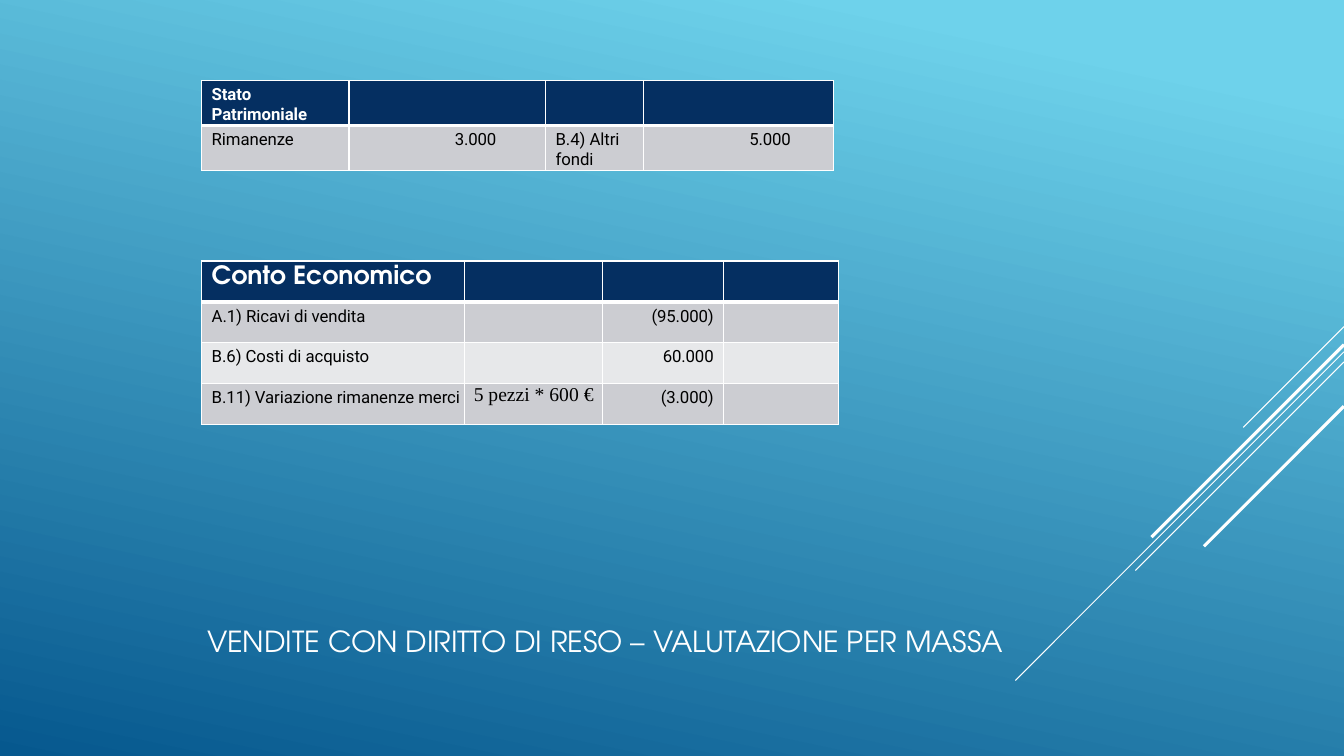
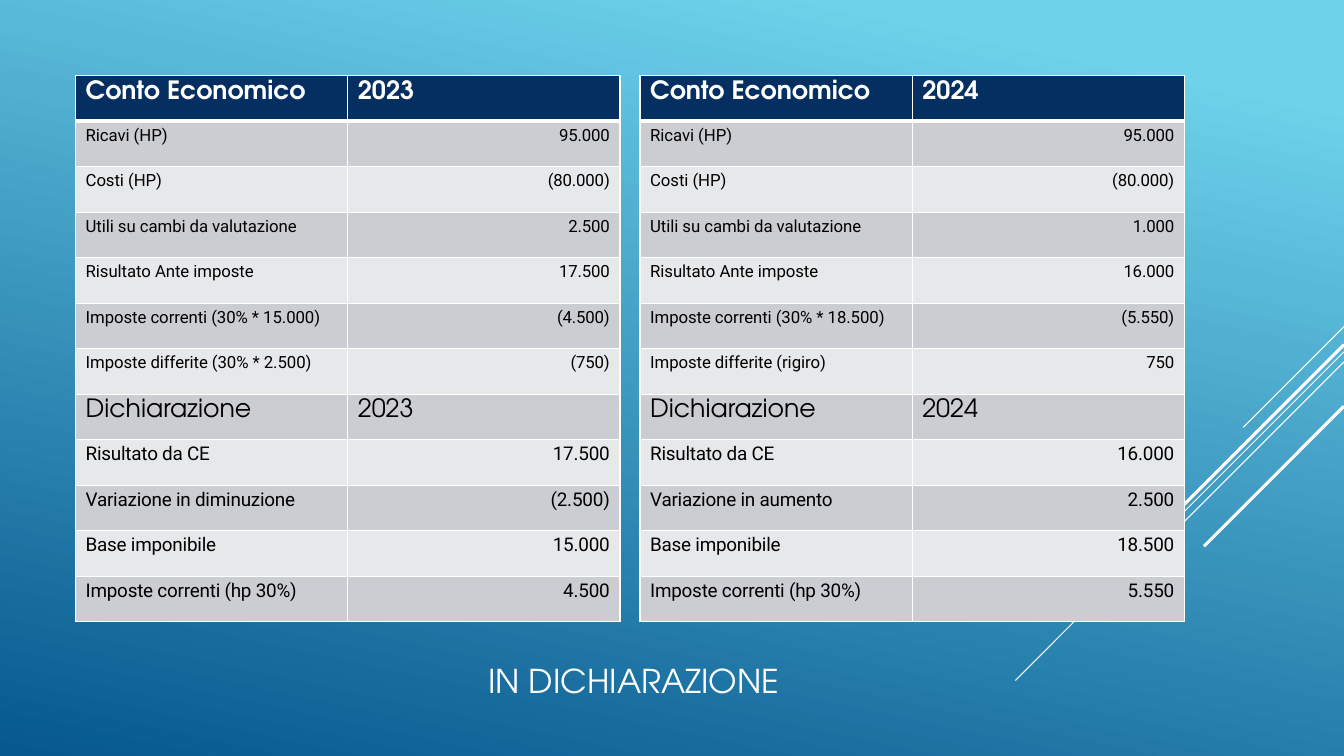
"""Build two slides of accounting tables on a shared blue gradient."""
from collections import namedtuple

from lxml import etree
from pptx import Presentation
from pptx import util as u
from pptx.dml.color import RGBColor
from pptx.enum import shapes, text
from pptx.oxml import ns

Pt = u.Pt
WHITE = RGBColor(0xFF, 0xFF, 0xFF)
BLACK = RGBColor(0, 0, 0)
NAVY = RGBColor(0x05, 0x2F, 0x61)
DARK_BAND = RGBColor(0xCC, 0xCD, 0xD2)
LIGHT_BAND = RGBColor(0xE7, 0xE8, 0xEA)
SKY = RGBColor(0x6E, 0xD2, 0xEB)
OCEAN = RGBColor(0x06, 0x58, 0x8E)
DISPLAY_FONT = "TeX Gyre Adventor"
BODY_FONT = "Roboto"
LEFT, CENTER, RIGHT = text.PP_ALIGN.LEFT, text.PP_ALIGN.CENTER, text.PP_ALIGN.RIGHT

SLIDE_WIDTH, SLIDE_HEIGHT = 960, 540
DIAGONALS = [(233.3, 72, 0.75), (251.3, 234.7, 0.75), (258.5, 149, 0.75),
             (246.2, 137.5, 2.25), (290.2, 100, 2.25)]

Style = namedtuple("Style", "font size align left right top before tracking")
HEADING = Style(DISPLAY_FONT, 18, LEFT, 7.2, 7.2, 3.6, 0, 0)
LABEL = Style(BODY_FONT, 12, LEFT, 7.2, 0, 3.2, 3.3, -5)
AMOUNT = LABEL._replace(align=RIGHT, left=0, right=7.2, tracking=-10)
INDENTED = LABEL._replace(left=75.6, tracking=-10)
NOTE = Style("Times New Roman", 14, CENTER, 0, 0, 0, 0, 0)
LARGE_LABEL = LABEL._replace(size=13.5, top=2.6, before=2.6, tracking=-15)
LARGE_AMOUNT = AMOUNT._replace(size=13.5, top=2.6, before=2.6)


def add_base(title, left, top, width, height, size):
    slide = presentation.slides.add_slide(presentation.slide_layouts[6])
    for start, reach, weight in DIAGONALS:
        line = slide.shapes.add_connector(
            shapes.MSO_CONNECTOR.STRAIGHT, Pt(SLIDE_WIDTH), Pt(start),
            Pt(SLIDE_WIDTH - reach), Pt(start + reach))
        line.line.color.rgb = WHITE
        line.line.width = Pt(weight)
        etree.SubElement(line._element.spPr, ns.qn("a:effectLst"))
    frame = slide.shapes.add_textbox(Pt(left), Pt(top), Pt(width), Pt(height)).text_frame
    frame.word_wrap = True
    frame.vertical_anchor = text.MSO_ANCHOR.MIDDLE
    frame.text = title
    paragraph = frame.paragraphs[0]
    paragraph.alignment = CENTER
    font = paragraph.runs[0].font
    font.name, font.size, font.color.rgb = DISPLAY_FONT, Pt(size), WHITE
    return slide


def add_grid(slide, left, top, widths, row_height, rows):
    table = slide.shapes.add_table(
        len(rows), len(widths), Pt(left), Pt(top),
        Pt(sum(widths)), Pt(row_height * len(rows))).table
    table.first_row = table.horz_banding = False
    for column, width in zip(table.columns, widths):
        column.width = Pt(width)
    for index, (styles, texts) in enumerate(rows):
        table.rows[index].height = Pt(row_height)
        band = NAVY if index == 0 else (LIGHT_BAND, DARK_BAND)[index % 2]
        for cell, style, content in zip(table.rows[index].cells, styles, texts):
            properties = cell._tc.get_or_add_tcPr()
            for side in "LRTB":
                under_header = (index, side) in ((0, "B"), (1, "T"))
                border = etree.SubElement(properties, ns.qn(f"a:ln{side}"),
                                          w=str(Pt(3 if under_header else 1)))
                fill = etree.SubElement(border, ns.qn("a:solidFill"))
                etree.SubElement(fill, ns.qn("a:srgbClr"), val=str(WHITE))
            cell.fill.solid()
            cell.fill.fore_color.rgb = band
            cell.margin_left, cell.margin_right = Pt(style.left), Pt(style.right)
            cell.margin_top, cell.margin_bottom = Pt(style.top), Pt(0)
            cell.text_frame.text = content
            paragraph = cell.text_frame.paragraphs[0]
            paragraph.alignment = style.align
            paragraph.space_before = Pt(style.before)
            for run in paragraph.runs:
                run.font.name, run.font.size = style.font, Pt(style.size)
                run.font.bold = index == 0
                run.font.color.rgb = WHITE if index == 0 else BLACK
                run._r.get_or_add_rPr().set("spc", str(style.tracking))


presentation = Presentation()
presentation.slide_width, presentation.slide_height = Pt(SLIDE_WIDTH), Pt(SLIDE_HEIGHT)
background = presentation.slide_master.background.fill
background.gradient()
background.gradient_angle = 258
for stop, color, position in zip(background.gradient_stops, (SKY, OCEAN), (0.1, 1)):
    stop.color.rgb = color
    stop.position = position

slide = add_base("VENDITE CON DIRITTO DI RESO – VALUTAZIONE PER MASSA",
                 54, 443.5, 756.7, 28.8, 20.7)
add_grid(slide, 144, 57.6, [105.3, 140.4, 70, 135.6], 29.5, [
    ([LABEL] * 4, ["Stato Patrimoniale", "", "", ""]),
    ([LABEL, INDENTED, LABEL, INDENTED], ["Rimanenze", "3.000", "B.4) Altri fondi", "5.000"]),
])
entry = [LABEL, NOTE, AMOUNT, AMOUNT]
add_grid(slide, 144, 186.5, [188, 98.6, 86.4, 82], 29.2, [
    ([HEADING] * 4, ["Conto Economico", "", "", ""]),
    (entry, ["A.1) Ricavi di vendita", "", "(95.000)", ""]),
    (entry, ["B.6) Costi di acquisto", "", "60.000", ""]),
    (entry, ["B.11) Variazione rimanenze merci", "5 pezzi * 600 €", "(3.000)", ""]),
])

slide = add_base("IN DICHIARAZIONE", 59, 468.7, 787, 34.6, 23.4)
years = [
    ("2023",
     [("Utili su cambi da valutazione", "2.500"),
      ("Risultato Ante imposte", "17.500"),
      ("Imposte correnti (30% * 15.000)", "(4.500)"),
      ("Imposte differite (30% * 2.500)", "(750)")],
     [("Risultato da CE", "17.500"),
      ("Variazione in diminuzione", "(2.500)"),
      ("Base imponibile", "15.000"),
      ("Imposte correnti (hp 30%)", "4.500")]),
    ("2024",
     [("Utili su cambi da valutazione", "1.000"),
      ("Risultato Ante imposte", "16.000"),
      ("Imposte correnti (30% * 18.500)", "(5.550)"),
      ("Imposte differite (rigiro)", "750")],
     [("Risultato da CE", "16.000"),
      ("Variazione in aumento", "2.500"),
      ("Base imponibile", "18.500"),
      ("Imposte correnti (hp 30%)", "5.550")]),
]
shared_entries = [("Ricavi (HP)", "95.000"), ("Costi (HP)", "(80.000)")]
for position, (year, income, declaration) in enumerate(years):
    rows = [([HEADING] * 2, ["Conto Economico", year])]
    rows += [([LABEL, AMOUNT], pair) for pair in shared_entries + income]
    rows.append(([HEADING] * 2, ["Dichiarazione", year]))
    rows += [([LARGE_LABEL, LARGE_AMOUNT], pair) for pair in declaration]
    add_grid(slide, 54 + position * 403.2, 54, [194.4] * 2, 32.52, rows)

presentation.save("out.pptx")
